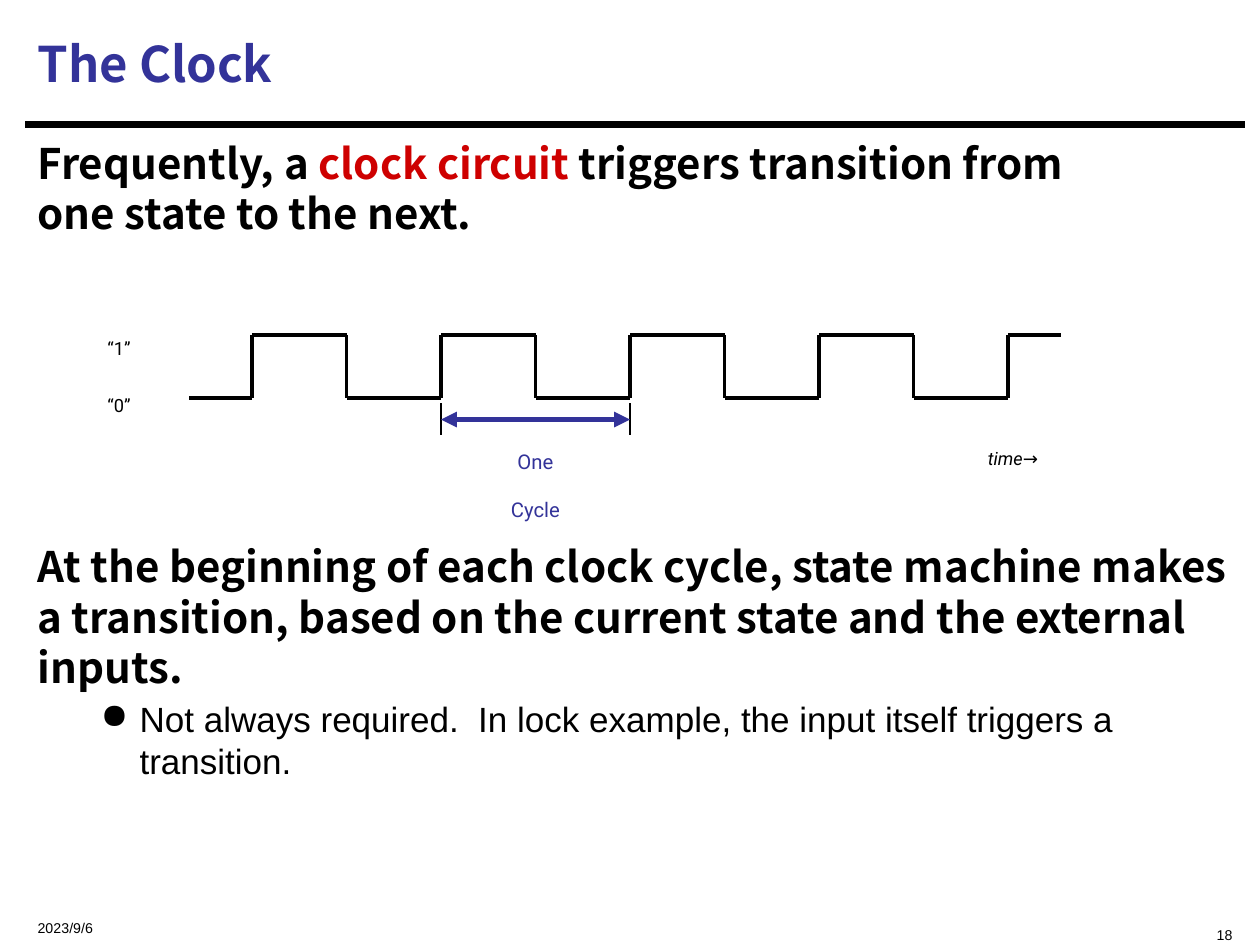
"""Build the clock slide: a square wave with its cycle marked, and notes."""
from lxml import etree
from pptx import Presentation, util as u
from pptx.dml.color import RGBColor
from pptx.enum import shapes, text
from pptx.oxml.ns import qn

BLACK = RGBColor(0, 0, 0)
BLUE = RGBColor(0x33, 0x33, 0x99)
RED = RGBColor(0xCE, 0, 0)
HEAVY, PLAIN, LABEL = "Noto Sans CJK SC", "Arial", "Roboto"
MID, TOP = text.MSO_ANCHOR.MIDDLE, text.MSO_ANCHOR.TOP
LEFT, MIDST, RIGHT = text.PP_ALIGN.LEFT, text.PP_ALIGN.CENTER, text.PP_ALIGN.RIGHT

HIGH, LOW = 2.66, 3.16
EDGES = [2 + 0.75 * i for i in range(9)]
START, END = 1.5, 8.42
CYCLE = EDGES[2], EDGES[4]

LEAD = [("Frequently, a ", BLACK), ("clock circuit", RED),
        (" triggers transition from\none state to the next.", BLACK)]
RULE = ("At the beginning of each clock cycle, state machine makes a transition, "
        "based on the current state and the external inputs.")
NOTE = ("Not always required.\u00a0 In lock example, the input itself "
        "triggers a transition.")
TAGS = [
    (["“1”"], (0.69, 2.46, 0.51, 0.4), dict(size=18)),
    (["“0”"], (0.69, 2.91, 0.51, 0.4), dict(size=18)),
    (["time→"], (7.58, 3.33, 0.92, 0.4), dict(size=18, italic=True)),
    (["One", "Cycle"], (3.8, 3.33, 0.9, 0.77), dict(size=20, color=BLUE)),
]
FOOT = [
    ("2023/9/6", (0.2, 7.17, 2.5, 0.25), LEFT, MID),
    ("18", (6.88, 7.17, 3, 0.25), RIGHT, TOP),
]


def add_box(slide, place, anchor=TOP, wrap=True):
    frame = slide.shapes.add_textbox(*map(u.Inches, place)).text_frame
    frame.word_wrap = wrap
    frame.vertical_anchor = anchor
    return frame


def write(frame, words, size=24, font=HEAVY, color=BLACK, bold=False,
          italic=False, align=LEFT, before=0, pitch=None, sub=False):
    para = frame.paragraphs[0]
    if para.runs:
        para = frame.add_paragraph()
    para.alignment = align
    para.space_before = u.Pt(before)
    if pitch:
        para.line_spacing = u.Pt(pitch)
    for piece, tint in [(words, color)] if isinstance(words, str) else words:
        for i, line in enumerate(piece.split("\n")):
            if i:
                para.add_line_break()
            run = para.add_run()
            run.text = line
            face = run.font
            face.name, face.size = font, u.Pt(size)
            face.bold, face.italic = bold, italic
            face.color.rgb = tint
            props = run._r.get_or_add_rPr()
            etree.SubElement(props, qn("a:ea")).set("typeface", font)
            if sub:
                props.set("baseline", "-25000")
    return para


def add_line(slide, x1, y1, x2, y2, width=2.25, color=BLACK, arrows=False):
    line = slide.shapes.add_connector(
        shapes.MSO_CONNECTOR.STRAIGHT, *map(u.Inches, (x1, y1, x2, y2)))
    line.line.width = u.Pt(width)
    line.line.color.rgb = color
    if arrows:
        for end in ("a:headEnd", "a:tailEnd"):
            etree.SubElement(line.line._get_or_add_ln(), qn(end)).set("type", "triangle")
    etree.SubElement(line._element.spPr, qn("a:effectLst"))


def add_wave(slide):
    stops = [START, *EDGES, END]
    for i, (left, right) in enumerate(zip(stops, stops[1:])):
        level = HIGH if i % 2 else LOW
        add_line(slide, left, level, right, level)
    for x in EDGES:
        add_line(slide, x, HIGH, x, LOW)
    for x in CYCLE:
        add_line(slide, x, 3.2, x, 3.45, width=0.75)
    add_line(slide, CYCLE[0], 3.33, CYCLE[1], 3.33, width=3, color=BLUE, arrows=True)


def add_body(slide):
    frame = add_box(slide, (0.2, 1.07, 9.67, 5.99))
    frame.margin_top = u.Inches(0.02)
    frame.margin_right = u.Inches(0.05)
    write(frame, LEAD, bold=True, before=4.8, pitch=28.8)
    write(frame, RULE, bold=True, before=173, pitch=28.8)
    item = write(frame, NOTE, size=20, font=PLAIN, before=3, pitch=24)
    props = item._p.get_or_add_pPr()
    props.set("lvl", "1")
    props.set("marL", str(u.Inches(0.81)))
    props.set("indent", str(u.Inches(-0.31)))
    etree.SubElement(props, qn("a:buChar")).set("char", "●")


def main():
    deck = Presentation()
    deck.slide_width, deck.slide_height = u.Inches(10), u.Inches(7.5)
    slide = deck.slides.add_slide(deck.slide_layouts[6])
    add_line(slide, 0.2, 0.99, 9.88, 0.99, width=3.75)
    for words, place, align, anchor in FOOT:
        write(add_box(slide, place, anchor), words, size=14, font=PLAIN,
              align=align, sub=True)
    write(add_box(slide, (0.2, 0.08, 9.67, 0.84), MID), "The Clock",
          size=28, color=BLUE, bold=True)
    add_body(slide)
    add_wave(slide)
    for lines, place, look in TAGS:
        frame = add_box(slide, place, wrap=False)
        for line in lines:
            write(frame, line, font=LABEL, align=MIDST, sub=True, **look)
    deck.save("out.pptx")


if __name__ == "__main__":
    main()
